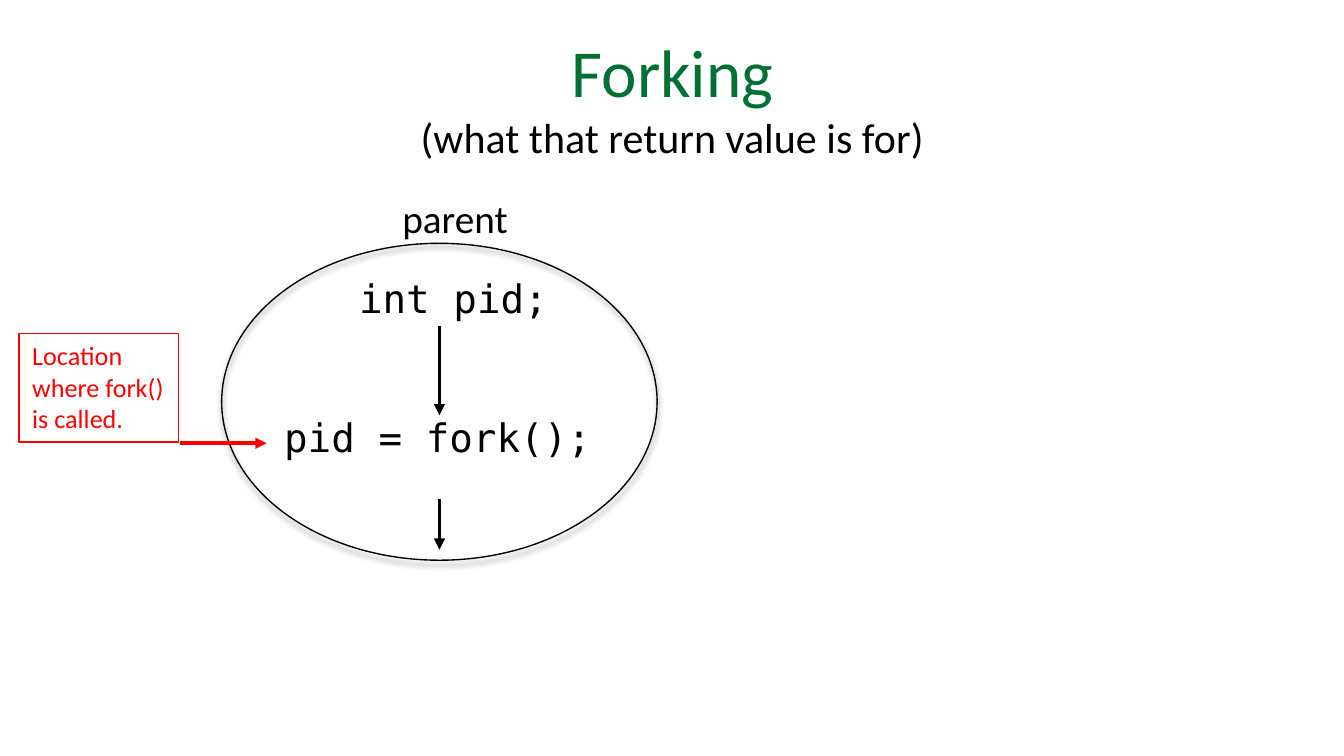
from dataclasses import dataclass

from lxml import etree
from pptx import Presentation
from pptx.dml.color import RGBColor
from pptx.enum import shapes, text
from pptx.oxml import ns
from pptx.util import Cm, Pt


@dataclass(frozen=True)
class Theme:
    ink: RGBColor = RGBColor(0, 0, 0)
    green: RGBColor = RGBColor(0, 0x70, 0x33)
    red: RGBColor = RGBColor(0xFF, 0, 0)
    sans: str = "Calibri"
    mono: str = "DejaVu Sans Mono"
    title: float = 36
    sub: float = 22.5
    body: float = 21
    note: float = 14
    thin: float = 0.75
    thick: float = 2


THEME = Theme()


def sub(node, tag, **attrs):
    return etree.SubElement(node, ns.qn(tag), attrs)


def write(par, words, size, color, face=THEME.sans):
    run = par.add_run()
    run.text = words
    run.font.size = Pt(size)
    run.font.name = face
    run.font.color.rgb = color


def label(slide, box, lines):
    """Add a centred text box; each line is (words, size, color, face)."""
    frame = slide.shapes.add_textbox(*map(Cm, box)).text_frame
    frame.word_wrap = True
    frame.vertical_anchor = text.MSO_ANCHOR.MIDDLE
    frame.margin_left = frame.margin_right = Cm(0.1)
    frame.margin_top = frame.margin_bottom = Cm(0.1)
    for i, line in enumerate(lines):
        par = frame.add_paragraph() if i else frame.paragraphs[0]
        par.alignment = text.PP_ALIGN.CENTER
        write(par, *line)


def arrow(slide, start, end, color):
    line = slide.shapes.add_connector(
        shapes.MSO_CONNECTOR.STRAIGHT, *map(Cm, (*start, *end)))
    line.line.color.rgb = color
    line.line.width = Pt(THEME.thick)
    sub(line.line._get_or_add_ln(), "a:tailEnd", type="triangle")
    sub(line._element.spPr, "a:effectLst")


def outline(slide, kind, box, color):
    shape = slide.shapes.add_shape(kind, *map(Cm, box))
    shape.shadow.inherit = False
    shape.fill.background()
    shape.line.color.rgb = color
    shape.line.width = Pt(THEME.thin)
    return shape


def shade(shape):
    """Give the shape a soft shadow straight below it."""
    effects = shape._element.spPr.find(ns.qn("a:effectLst"))
    cast = sub(effects, "a:outerShdw", blurRad=str(Pt(3)), dist=str(Pt(2)),
               dir="5400000", rotWithShape="0")
    tint = sub(cast, "a:srgbClr", val=str(THEME.ink))
    sub(tint, "a:alpha", val="50000")


def heading(slide, box):
    label(slide, box, [
        ("Forking", THEME.title, THEME.green, THEME.sans),
        ("(what that return value is for)", THEME.sub, THEME.ink, THEME.sans),
    ])


def process(slide, box):
    """Draw the parent process: its oval, code steps and flow arrows."""
    left, top, width, _ = box
    shade(outline(slide, shapes.MSO_SHAPE.OVAL, box, THEME.ink))
    mid = left + width / 2
    for start, end in ((1.57, 3.25), (4.83, 5.79)):
        arrow(slide, (mid, top + start), (mid, top + end), THEME.ink)
    for words, face, x, y, w in (
        ("parent", THEME.sans, 3, -1.04, 2.82),
        ("int pid;", THEME.mono, 2.49, 0.48, 3.78),
        ("pid = fork();", THEME.mono, 1.07, 3.1, 6.02),
    ):
        label(slide, (left + x, top + y, w, 1.1),
              [(words, THEME.body, THEME.ink, face)])


def note(slide, box):
    """Draw the red note with an arrow from its lower right corner."""
    left, top, width, height = box
    frame = outline(slide, shapes.MSO_SHAPE.RECTANGLE, box,
                    THEME.red).text_frame
    frame.word_wrap = False
    frame.auto_size = text.MSO_AUTO_SIZE.SHAPE_TO_FIT_TEXT
    frame.vertical_anchor = text.MSO_ANCHOR.TOP
    for i, words in enumerate(("Location", "where fork()", "is called.")):
        par = frame.add_paragraph() if i else frame.paragraphs[0]
        par.alignment = text.PP_ALIGN.LEFT
        write(par, words, THEME.note, THEME.red)
    right, base = left + width + 0.03, top + height + 0.02
    arrow(slide, (right, base), (right + 1.63, base), THEME.red)


def main():
    deck = Presentation()
    deck.slide_width, deck.slide_height = Cm(25.4), Cm(14.29)
    slide = deck.slides.add_slide(deck.slide_layouts[6])
    process(slide, (4.19, 4.6, 8.23, 5.99))
    heading(slide, (5.18, 0.05, 15.06, 3.53))
    note(slide, (0.36, 6.3, 3.02, 2.06))
    deck.save("out.pptx")


if __name__ == "__main__":
    main()
